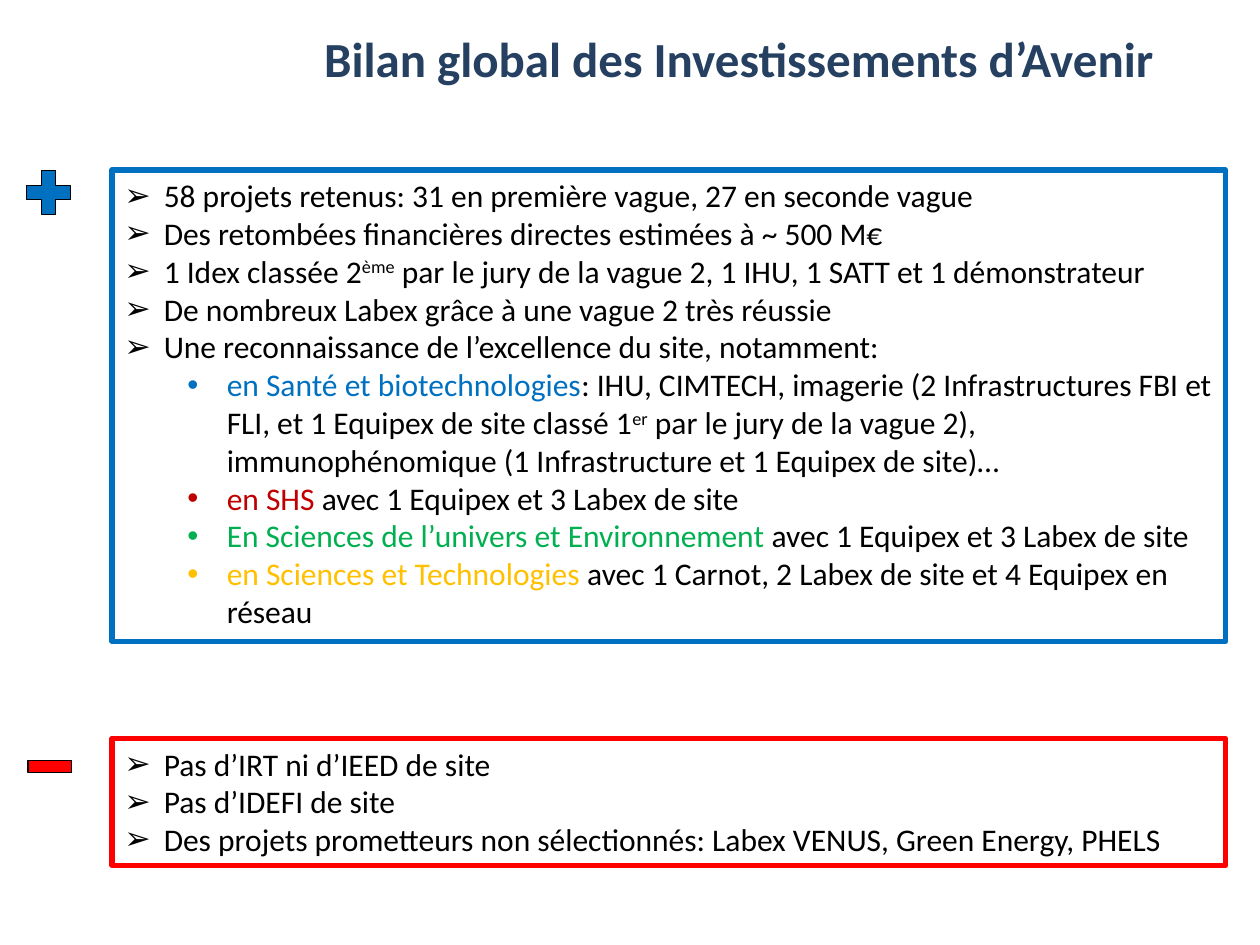
from lxml.etree import SubElement
from pptx import Presentation
from pptx.dml.color import RGBColor
from pptx.enum.shapes import MSO_SHAPE as Shape
from pptx.enum.text import MSO_ANCHOR as Anchor, PP_ALIGN as Align
from pptx.oxml.ns import qn
from pptx.util import Pt

NAVY = RGBColor(0x25, 0x40, 0x61)
BLUE = RGBColor(0x00, 0x70, 0xC0)
RED = RGBColor(0xFF, 0x00, 0x00)
CRIMSON = RGBColor(0xC0, 0x00, 0x00)
GREEN = RGBColor(0x00, 0xB0, 0x50)
GOLD = RGBColor(0xFF, 0xC0, 0x00)
BLACK = RGBColor(0x00, 0x00, 0x00)
WHITE = RGBColor(0xFF, 0xFF, 0xFF)

HANGING = 22.5
LEVELS = (("➢", 22.5), ("•", 58.5))
BOX_LEFT, BOX_WIDTH = 64, 636.5
SIGN_WIDTH = 34

STRENGTHS = [
    (0, ["58 projets retenus: 31 en première vague, 27 en seconde vague"]),
    (0, ["Des retombées financières directes estimées à ~ 500 M€"]),
    (0, ["1 Idex classée 2", ("ème", {"raised": True}),
         " par le jury de la vague 2, 1 IHU, 1 SATT et 1 démonstrateur"]),
    (0, ["De nombreux Labex grâce à une vague 2 très réussie"]),
    (0, ["Une reconnaissance de l’excellence du site, notamment:"]),
    (1, [("en Santé et biotechnologies", {"color": BLUE}),
         ": IHU, CIMTECH, imagerie (2 Infrastructures FBI et FLI, et 1 Equipex de site classé 1",
         ("er", {"raised": True}),
         " par le jury de la vague 2), immunophénomique (1 Infrastructure et 1 Equipex de site)…"]),
    (1, [("en SHS ", {"color": CRIMSON}), "avec 1 Equipex et 3 Labex de site"]),
    (1, [("En Sciences de l’univers et Environnement ", {"color": GREEN}),
         "avec 1 Equipex et 3 Labex de site"]),
    (1, [("en Sciences et Technologies ", {"color": GOLD}),
         "avec 1 Carnot, 2 Labex de site et 4 Equipex en réseau"]),
]
WEAKNESSES = [
    (0, ["Pas d’IRT ni d’IEED de site"]),
    (0, ["Pas d’IDEFI de site"]),
    (0, ["Des projets prometteurs non sélectionnés: Labex VENUS, Green Energy, PHELS"]),
]


def write(paragraph, text, size=18, color=BLACK, bold=False, raised=False):
    run = paragraph.add_run()
    run.text = text
    run.font.name = "Calibri"
    run.font.size = Pt(size)
    run.font.bold = bold
    run.font.color.rgb = color
    if raised:
        run.font._element.set("baseline", "30000")


class Board:
    def __init__(self, slide):
        self.shapes = slide.shapes

    def title(self, text, left, top, width, height):
        frame = self.shapes.add_textbox(Pt(left), Pt(top), Pt(width), Pt(height)).text_frame
        frame.word_wrap = True
        heading = frame.paragraphs[0]
        heading.alignment = Align.RIGHT
        write(heading, text, size=28, color=NAVY, bold=True)

    def block(self, kind, left, top, width, height, fill, line, weight):
        block = self.shapes.add_shape(kind, Pt(left), Pt(top), Pt(width), Pt(height))
        block.shadow.inherit = False
        block.fill.solid()
        block.fill.fore_color.rgb = fill
        block.line.color.rgb = line
        block.line.width = Pt(weight)
        return block

    def sign(self, kind, left, top, height, color):
        self.block(kind, left, top, SIGN_WIDTH, height, color, BLACK, 0.75)

    def findings(self, items, top, height, color):
        box = self.block(Shape.RECTANGLE, BOX_LEFT, top, BOX_WIDTH, height, WHITE, color, 3)
        frame = box.text_frame
        frame.word_wrap = True
        frame.vertical_anchor = Anchor.TOP
        for index, (level, parts) in enumerate(items):
            finding = frame.add_paragraph() if index else frame.paragraphs[0]
            finding.alignment = Align.LEFT
            finding.level = level
            self.bullet(finding, *LEVELS[level])
            for part in parts:
                text, style = (part, {}) if isinstance(part, str) else part
                write(finding, text, **style)

    def bullet(self, paragraph, mark, margin):
        properties = paragraph._p.get_or_add_pPr()
        properties.set("marL", str(Pt(margin)))
        properties.set("indent", str(-Pt(HANGING)))
        SubElement(properties, qn("a:buFont"), typeface="Arial")
        SubElement(properties, qn("a:buChar"), char=mark)


def main():
    deck = Presentation()
    deck.slide_width, deck.slide_height = Pt(720), Pt(540)
    board = Board(deck.slides.add_slide(deck.slide_layouts[6]))
    board.title("Bilan global des Investissements d’Avenir", 42.5, 13, 623.5, 41)
    board.findings(STRENGTHS, 97.2, 269.3, BLUE)
    board.findings(WEAKNESSES, 421.9, 72.7, RED)
    board.sign(Shape.MATH_PLUS, 10.8, 92.9, 34, BLUE)
    board.sign(Shape.MATH_MINUS, 11.5, 424, 28, RED)
    deck.save("out.pptx")


if __name__ == "__main__":
    main()
